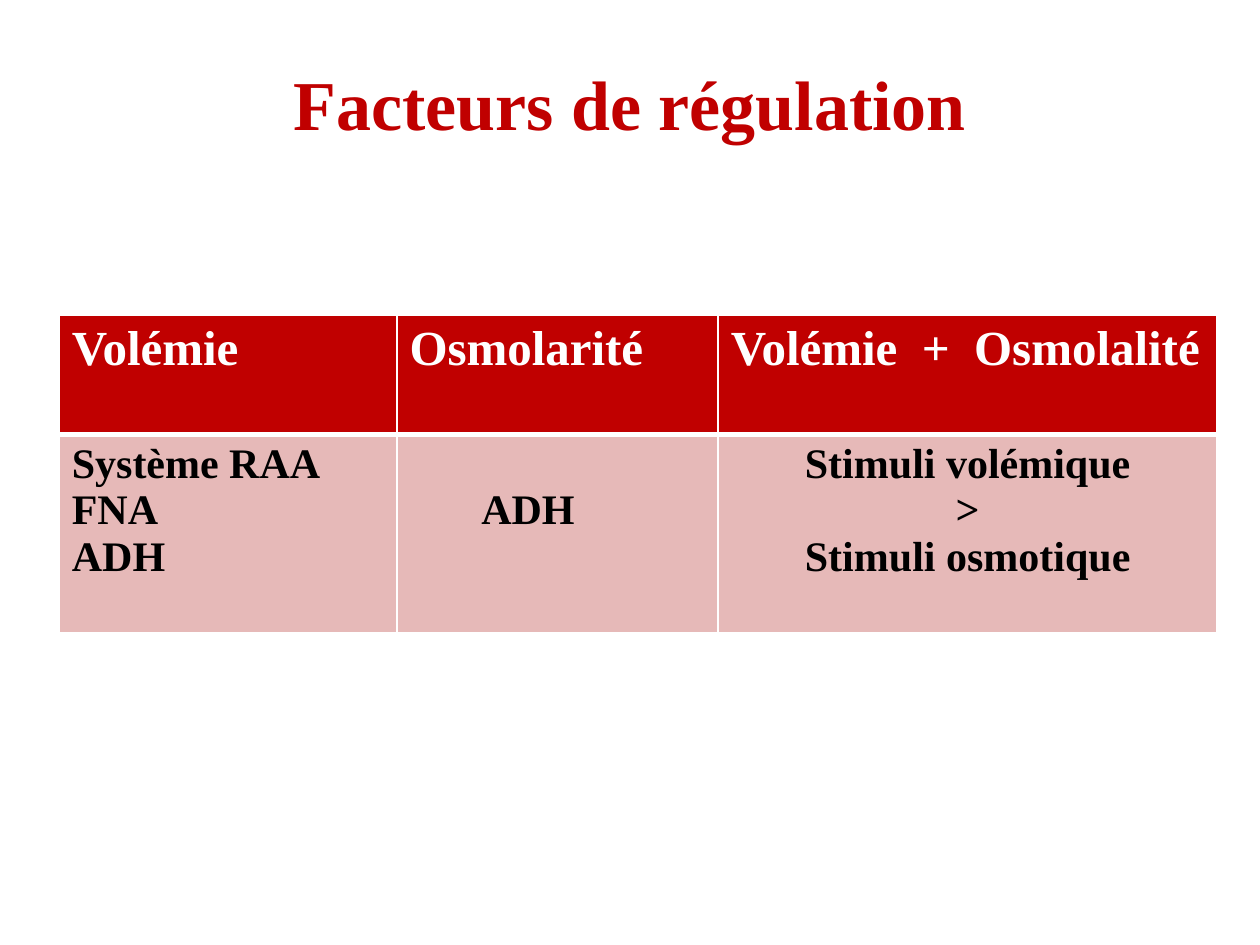
from lxml import etree
from pptx import Presentation
from pptx import util as u
from pptx.dml.color import RGBColor
from pptx.enum import text
from pptx.oxml.ns import qn

FONT = "Times New Roman"
RED, PINK, WHITE, BLACK = "C00000", "E6B9B8", "FFFFFF", "000000"
TITLE = "Facteurs de régulation"
HEADERS = ["Volémie", "Osmolarité", "Volémie  +  Osmolalité"]
FACTORS = [
    ["Système RAA", "FNA", "ADH"],
    ["ADH"],
    ["Stimuli volémique", ">", "Stimuli osmotique"],
]
COLUMNS = [2.68, 2.55, 3.96]
ROWS = [0.95, 1.57]
LEFT, TOP = 0.47, 2.5


def color(value):
    return RGBColor.from_string(value)


def write(frame, lines, size, ink, align):
    frame.text = "\n".join(lines)
    for para in frame.paragraphs:
        para.alignment = align
        font = para.font
        font.name, font.size, font.bold = FONT, u.Pt(size), True
        font.color.rgb = color(ink)


def set_borders(cell, widths):
    properties = cell._tc.get_or_add_tcPr()
    for index, (side, width) in enumerate(widths.items()):
        line = etree.Element(qn(f"a:ln{side}"), w=str(u.Pt(width)))
        fill = etree.SubElement(line, qn("a:solidFill"))
        etree.SubElement(fill, qn("a:srgbClr"), val=WHITE)
        properties.insert(index, line)


def fill_cell(cell, lines, size, ink, back, align, widths):
    write(cell.text_frame, lines, size, ink, align)
    cell.fill.solid()
    cell.fill.fore_color.rgb = color(back)
    set_borders(cell, widths)


def main():
    deck = Presentation()
    deck.slide_width, deck.slide_height = u.Inches(10), u.Inches(7.5)
    page = deck.slides.add_slide(deck.slide_layouts[6])
    align = text.PP_ALIGN

    box = page.shapes.add_textbox(*map(u.Inches, (0.5, 0.3, 9, 1.03)))
    box.text_frame.word_wrap = True
    box.text_frame.vertical_anchor = text.MSO_ANCHOR.MIDDLE
    write(box.text_frame, [TITLE], 40, RED, align.CENTER)

    area = (LEFT, TOP, sum(COLUMNS), sum(ROWS))
    table = page.shapes.add_table(
        len(ROWS), len(COLUMNS), *map(u.Inches, area)).table
    for column, width in zip(table.columns, COLUMNS):
        column.width = u.Inches(width)
    for row, height in zip(table.rows, ROWS):
        row.height = u.Inches(height)

    for index, (header, factors) in enumerate(zip(HEADERS, FACTORS)):
        fill_cell(table.cell(0, index), [header], 28, WHITE, RED,
                  align.LEFT, dict(L=1, R=1, T=1, B=3))
        fill_cell(table.cell(1, index), factors, 24, BLACK, PINK,
                  align.CENTER if index == 2 else align.LEFT,
                  dict(L=1, R=1, T=3, B=1))

    hormone = table.cell(1, 1)
    hormone.margin_left, hormone.margin_top = u.Inches(0.67), u.Inches(0.42)

    deck.save("out.pptx")


if __name__ == "__main__":
    main()
